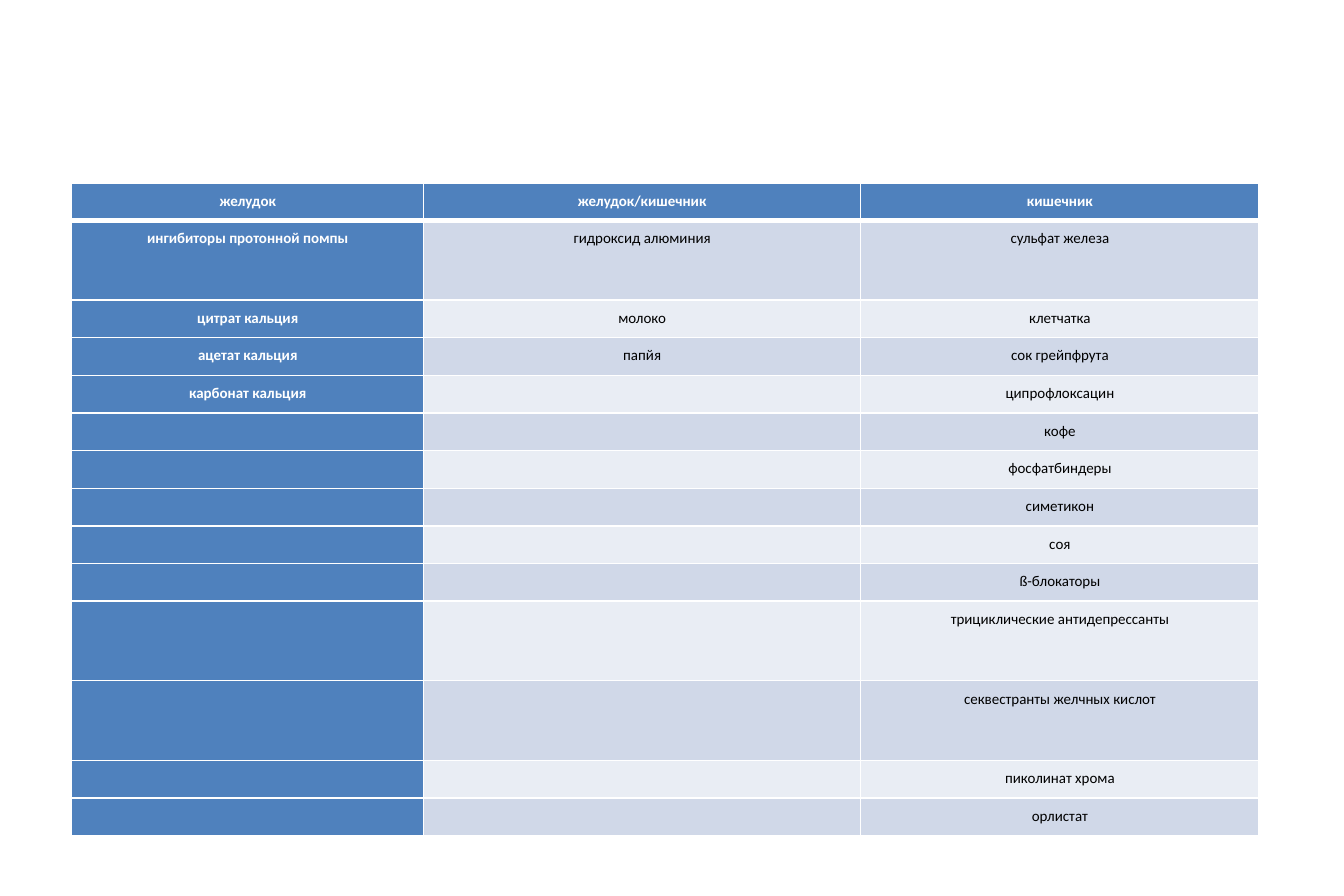
from dataclasses import dataclass
from itertools import zip_longest

from lxml import etree
from pptx import Presentation
from pptx import util as u
from pptx.dml.color import RGBColor
from pptx.enum import text
from pptx.oxml import ns


@dataclass(frozen=True)
class Theme:
    font: str = "Calibri"
    size: float = 9
    accent: str = "4F81BD"
    bands: tuple = ("D0D8E8", "E9EDF4")
    light: str = "FFFFFF"
    dark: str = "000000"
    border: float = 1
    header_border: float = 3
    row: float = 22.7
    tall_row: float = 48


THEME = Theme()
COLUMNS = {
    "желудок": ["ингибиторы протонной помпы", "цитрат кальция", "ацетат кальция", "карбонат кальция"],
    "желудок/кишечник": ["гидроксид алюминия", "молоко", "папйя"],
    "кишечник": [
        "сульфат железа", "клетчатка", "сок грейпфрута", "ципрофлоксацин", "кофе",
        "фосфатбиндеры", "симетикон", "соя", "ß-блокаторы",
        "трициклические антидепрессанты", "секвестранты желчных кислот",
        "пиколинат хрома", "орлистат",
    ],
}
COLUMN_SHARES = (2.95, 3.66, 3.34)
TALL_ROWS = (1, 10, 11)


def set_borders(cell, widths):
    tcPr = cell._tc.get_or_add_tcPr()
    for side, width in widths.items():
        ln = etree.SubElement(tcPr, ns.qn(f"a:ln{side}"), w=str(u.Pt(width)))
        fill = etree.SubElement(ln, ns.qn("a:solidFill"))
        etree.SubElement(fill, ns.qn("a:srgbClr"), val=THEME.light)


def style_cell(cell, label, row, col):
    strong = row == 0 or col == 0
    top = THEME.header_border if row == 1 else THEME.border
    bottom = THEME.header_border if row == 0 else THEME.border
    set_borders(cell, {"L": THEME.border, "R": THEME.border, "T": top, "B": bottom})
    cell.fill.solid()
    color = THEME.accent if strong else THEME.bands[(row - 1) % 2]
    cell.fill.fore_color.rgb = RGBColor.from_string(color)
    cell.margin_left = cell.margin_right = u.Pt(5)
    cell.margin_top = cell.margin_bottom = u.Pt(0)
    cell.vertical_anchor = text.MSO_ANCHOR.TOP
    p = cell.text_frame.paragraphs[0]
    p.font.name = THEME.font
    p.font.size = u.Pt(THEME.size)
    p.font.bold = strong
    p.font.color.rgb = RGBColor.from_string(THEME.light if strong else THEME.dark)
    if label:
        p.text = label
        p.alignment = text.PP_ALIGN.CENTER
        p.line_spacing = 1.5


def add_substances(s, left, top, width):
    rows = [tuple(COLUMNS), *zip_longest(*COLUMNS.values(), fillvalue="")]
    heights = [THEME.tall_row if i in TALL_ROWS else THEME.row for i in range(len(rows))]
    frame = s.shapes.add_table(
        len(rows), len(COLUMNS), u.Pt(left), u.Pt(top), u.Pt(width), u.Pt(sum(heights))
    )
    table = frame.table
    table.first_col = True
    for column, share in zip(table.columns, COLUMN_SHARES):
        column.width = u.Pt(width * share / sum(COLUMN_SHARES))
    for row, (labels, height) in enumerate(zip(rows, heights)):
        table.rows[row].height = u.Pt(height)
        for col, label in enumerate(labels):
            style_cell(table.cell(row, col), label, row, col)


def main():
    prs = Presentation()
    prs.slide_width, prs.slide_height = u.Pt(810), u.Pt(540)
    s = prs.slides.add_slide(prs.slide_layouts[6])
    add_substances(s, 43.2, 110.2, 715.7)
    prs.save("out.pptx")


if __name__ == "__main__":
    main()
